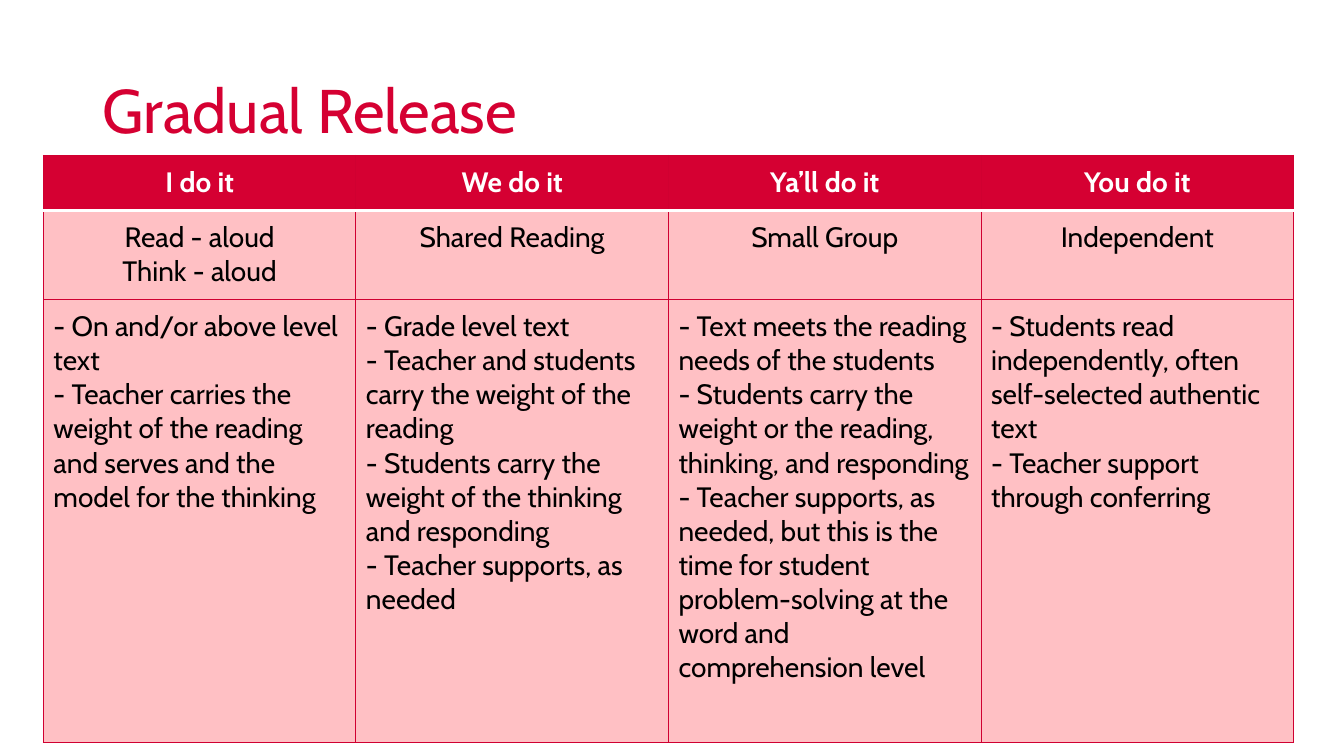
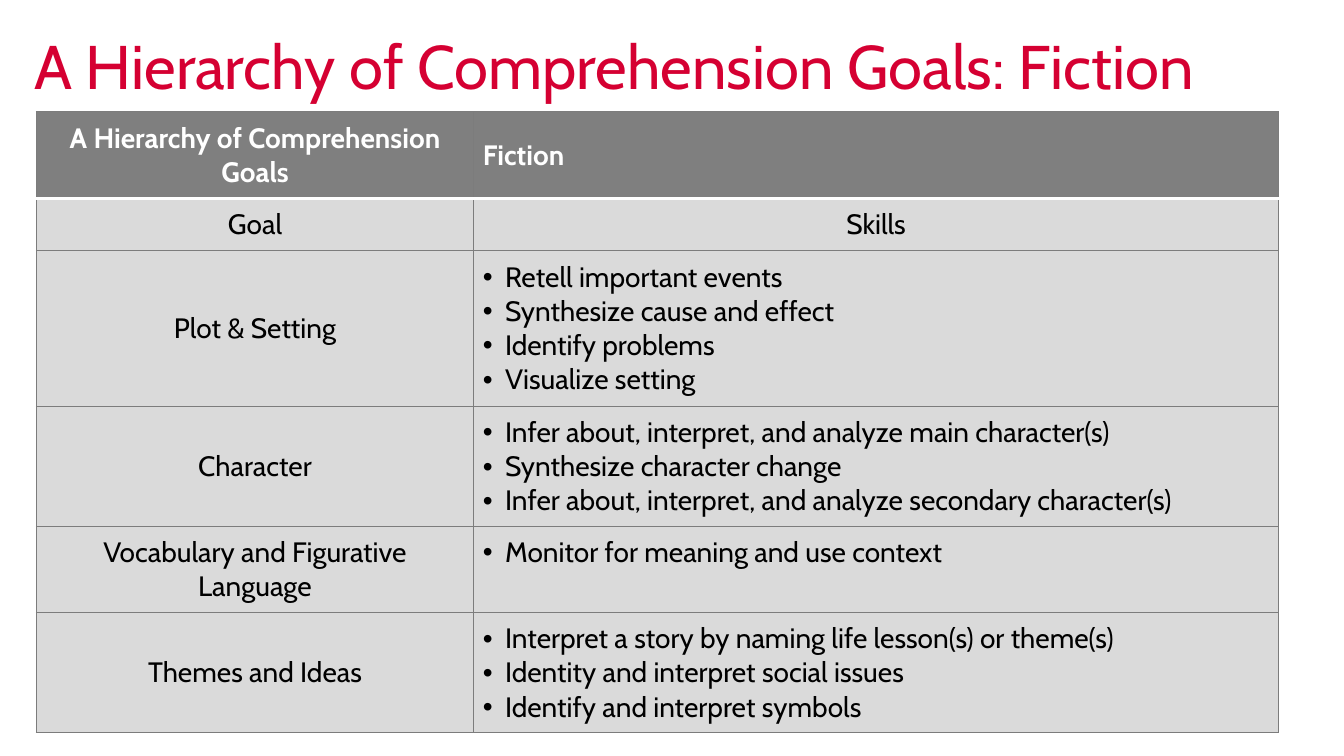
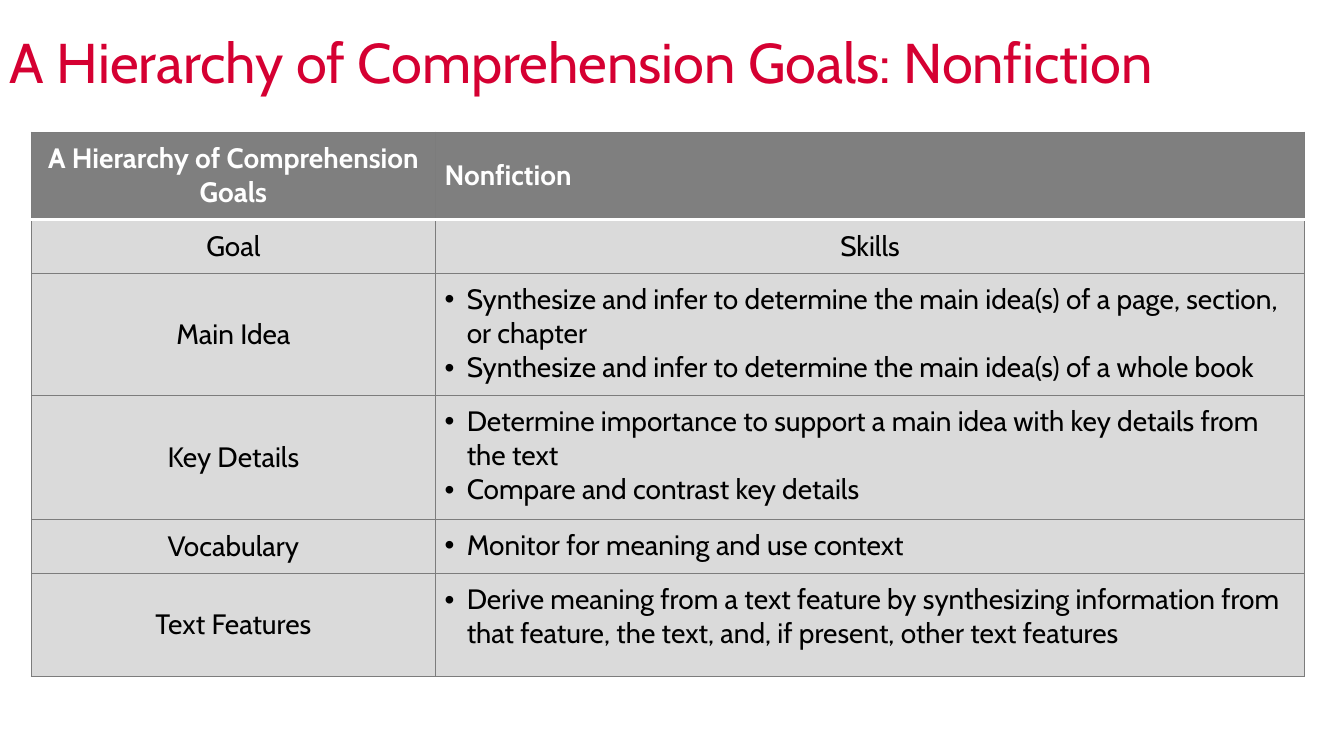
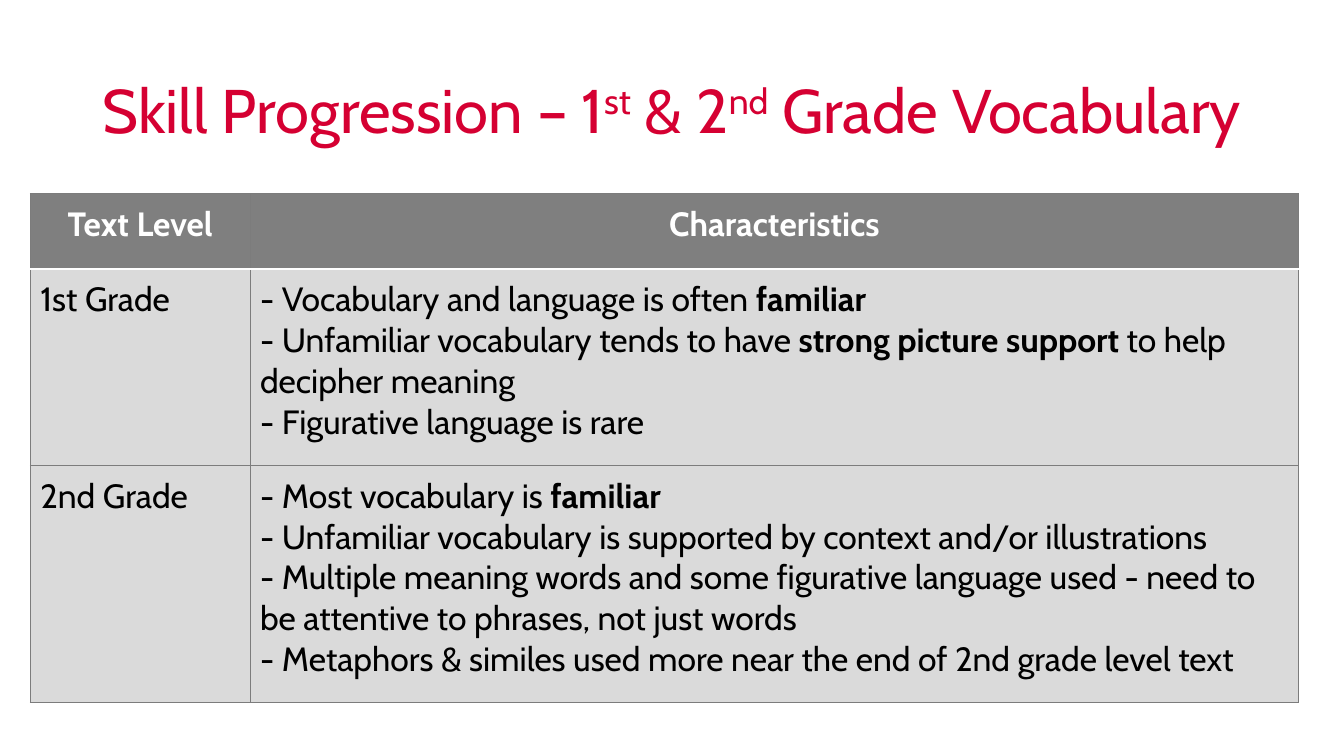
from dataclasses import dataclass
from functools import partial

from lxml.etree import SubElement
from pptx import Presentation
from pptx.dml.color import RGBColor
from pptx.enum.text import MSO_ANCHOR, PP_ALIGN
from pptx.oxml import parse_xml
from pptx.oxml.ns import nsdecls, qn
from pptx.util import Inches, Pt


@dataclass(frozen=True)
class Palette:
    header: str
    body: str
    border: str


@dataclass(frozen=True)
class Theme:
    font: str = "Cabin"
    accent: str = "D50032"
    text: str = "000000"
    light: str = "FFFFFF"
    red: Palette = Palette("D50032", "FFC0C4", "D00031")
    gray: Palette = Palette("7F7F7F", "DADADA", "7C7C7C")
    border_width: float = 0.75
    header_rule_width: float = 2
    bullet_indent: float = 0.22
    title_height: float = 1.45


@dataclass(frozen=True)
class Cell:
    lines: tuple
    align: PP_ALIGN = PP_ALIGN.LEFT
    anchor: MSO_ANCHOR = MSO_ANCHOR.TOP
    bulleted: bool = False


THEME = Theme()
SLIDE_SIZE = (13.33, 7.5)


def cell(*lines, **layout):
    return Cell(lines, **layout)


centered = partial(cell, align=PP_ALIGN.CENTER)
middle = partial(cell, anchor=MSO_ANCHOR.MIDDLE)
centered_middle = partial(centered, anchor=MSO_ANCHOR.MIDDLE)
bullets = partial(cell, bulleted=True)


def goal_rows(genre, skills_by_goal):
    """Rows of a goals table: genre header, column names, one row per goal."""
    return [
        [centered_middle("A Hierarchy of Comprehension Goals"), middle(genre)],
        [centered_middle("Goal"), centered_middle("Skills")],
        *([centered_middle(goal), bullets(*skills)]
          for goal, skills in skills_by_goal.items()),
    ]


RELEASE_ROWS = [
    [centered("I do it"), centered("We do it"),
     centered("Ya’ll do it"), centered("You do it")],
    [centered("Read - aloud", "Think - aloud"), centered("Shared Reading"),
     centered("Small Group"), centered("Independent")],
    [
        cell("- On and/or above level text",
             "- Teacher carries the weight of the reading and serves and the "
             "model for the thinking"),
        cell("- Grade level text",
             "- Teacher and students carry the weight of the reading",
             "- Students carry the weight of the thinking and responding",
             "- Teacher supports, as needed"),
        cell("- Text meets the reading needs of the students",
             "- Students carry the weight or the reading, thinking, and responding",
             "- Teacher supports, as needed, but this is the time for student "
             "problem-solving at the word and comprehension level"),
        cell("- Students read independently, often self-selected authentic text",
             "- Teacher support through conferring"),
    ],
]

FICTION_SKILLS = {
    "Plot & Setting": (
        "Retell important events", "Synthesize cause and effect",
        "Identify problems", "Visualize setting"),
    "Character": (
        "Infer about, interpret, and analyze main character(s)",
        "Synthesize character change",
        "Infer about, interpret, and analyze secondary character(s)"),
    "Vocabulary and Figurative Language": (
        "Monitor for meaning and use context",),
    "Themes and Ideas": (
        "Interpret a story by naming life lesson(s) or theme(s)",
        "Identity and interpret social issues",
        "Identify and interpret symbols"),
}

NONFICTION_SKILLS = {
    "Main Idea": (
        "Synthesize and infer to determine the main idea(s) of a page, section, "
        "or chapter",
        "Synthesize and infer to determine the main idea(s) of a whole book"),
    "Key Details": (
        "Determine importance to support a main idea with key details from the text",
        "Compare and contrast key details"),
    "Vocabulary": ("Monitor for meaning and use context",),
    "Text Features": (
        "Derive meaning from a text feature by synthesizing information from "
        "that feature, the text, and, if present, other text features",),
}

# In lines of text, *stars* mark bold and ^carets^ mark superscript.
VOCABULARY_ROWS = [
    [centered("Text Level"), centered("Characteristics")],
    [cell("1st Grade"), cell(
        "- Vocabulary and language is often *familiar*",
        "- Unfamiliar vocabulary tends to have *strong picture support *to help "
        "decipher meaning",
        "- Figurative language is rare")],
    [cell("2nd Grade"), cell(
        "- Most vocabulary is *familiar*",
        "- Unfamiliar vocabulary is supported by context and/or illustrations",
        "- Multiple meaning words and some figurative language used - need to be "
        "attentive to phrases, not just words",
        "- Metaphors & similes used more near the end of 2nd grade level text")],
]

SLIDES = [
    dict(title="Gradual Release", title_at=(0.92, 0.4, 11.5), title_size=44,
         rows=RELEASE_ROWS, palette=THEME.red, table_at=(0.43, 1.54),
         widths=[3.1] * 4, heights=[0.55, 0.88, 4.4], text_size=20, inset=0.1),
    dict(title="A Hierarchy of Comprehension Goals: Fiction",
         title_at=(0.24, -0.04, 12.62), title_size=44,
         rows=goal_rows("Fiction", FICTION_SKILLS), palette=THEME.gray,
         table_at=(0.36, 1.11), widths=[4.34, 7.98],
         heights=[0.86, 0.52, 1.54, 1.19, 0.86, 1.19], text_size=20, inset=0.09),
    dict(title="A Hierarchy of Comprehension Goals: Nonfiction",
         title_at=(0, -0.08, 13.33), title_size=40,
         rows=goal_rows("Nonfiction", NONFICTION_SKILLS), palette=THEME.gray,
         table_at=(0.31, 1.31), widths=[4.01, 8.62],
         heights=[0.87, 0.53, 1.21, 1.23, 0.54, 1.02], text_size=20, inset=0.09),
    dict(title="Skill Progression – 1^st^ & 2^nd^ Grade Vocabulary",
         title_at=(0.92, 0.4, 11.5), title_size=44,
         rows=VOCABULARY_ROWS, palette=THEME.gray, table_at=(0.3, 1.92),
         widths=[2.18, 10.4], heights=[0.75, 1.95, 2.35], text_size=24, inset=0.1),
]


def style_font(font, size, color, bold=False):
    font.name = THEME.font
    font.size = Pt(size)
    font.bold = bold
    font.color.rgb = RGBColor.from_string(color)


def add_marked_runs(paragraph, line):
    """Split a line at its marks; every second piece is bold or superscript."""
    mark = "^" if "^" in line else "*"
    for index, piece in enumerate(line.split(mark)):
        if not piece:
            continue
        run = paragraph.add_run()
        run.text = piece
        if index % 2 and mark == "*":
            run.font.bold = True
        elif index % 2:
            run._r.get_or_add_rPr().set("baseline", "30000")


def add_bullet(paragraph):
    properties = paragraph._p.get_or_add_pPr()
    indent = Inches(THEME.bullet_indent)
    properties.set("marL", str(indent))
    properties.set("indent", str(-indent))
    SubElement(properties, qn("a:buFont"), typeface="Arial")
    SubElement(properties, qn("a:buChar"), char="•")


def add_title(slide, text, at, size):
    left, top, width = map(Inches, at)
    frame = slide.shapes.add_textbox(
        left, top, width, Inches(THEME.title_height)).text_frame
    frame.word_wrap = True
    frame.vertical_anchor = MSO_ANCHOR.MIDDLE
    paragraph = frame.paragraphs[0]
    paragraph.line_spacing = 0.9
    style_font(paragraph.font, size, THEME.accent)
    add_marked_runs(paragraph, text)


def set_borders(table_cell, palette, row):
    """Outline a cell, with a heavier light rule between header and body."""
    plain = (palette.border, THEME.border_width)
    rule = (THEME.light, THEME.header_rule_width)
    edges = {"L": plain, "R": plain,
             "T": rule if row == 1 else plain,
             "B": rule if row == 0 else plain}
    properties = table_cell._tc.get_or_add_tcPr()
    for position, (side, (color, width)) in enumerate(edges.items()):
        properties.insert(position, parse_xml(
            f'<a:ln{side} {nsdecls("a")} w="{Pt(width)}"><a:solidFill>'
            f'<a:srgbClr val="{color}"/></a:solidFill></a:ln{side}>'))


def fill_cell(table_cell, content, row, palette, text_size, inset):
    is_header = row == 0
    table_cell.fill.solid()
    table_cell.fill.fore_color.rgb = RGBColor.from_string(
        palette.header if is_header else palette.body)
    set_borders(table_cell, palette, row)
    table_cell.vertical_anchor = content.anchor
    table_cell.margin_left = table_cell.margin_right = Inches(inset)
    table_cell.margin_top = table_cell.margin_bottom = Inches(inset)
    frame = table_cell.text_frame
    for index, line in enumerate(content.lines):
        paragraph = frame.add_paragraph() if index else frame.paragraphs[0]
        paragraph.alignment = content.align
        if content.bulleted:
            add_bullet(paragraph)
        style_font(paragraph.font, text_size,
                   THEME.light if is_header else THEME.text, is_header)
        add_marked_runs(paragraph, line)


def add_grid(slide, rows, palette, at, widths, heights, text_size, inset):
    left, top = map(Inches, at)
    table = slide.shapes.add_table(
        len(rows), len(widths), left, top,
        Inches(sum(widths)), Inches(sum(heights))).table
    table.horz_banding = False
    for column, width in zip(table.columns, widths):
        column.width = Inches(width)
    for table_row, height in zip(table.rows, heights):
        table_row.height = Inches(height)
    for row, contents in enumerate(rows):
        for column, content in enumerate(contents):
            fill_cell(table.cell(row, column), content, row,
                      palette, text_size, inset)


def main():
    deck = Presentation()
    deck.slide_width, deck.slide_height = map(Inches, SLIDE_SIZE)
    blank = deck.slide_layouts[6]
    for page in SLIDES:
        slide = deck.slides.add_slide(blank)
        add_grid(slide, page["rows"], page["palette"], page["table_at"],
                 page["widths"], page["heights"], page["text_size"], page["inset"])
        add_title(slide, page["title"], page["title_at"], page["title_size"])
    deck.save("out.pptx")


if __name__ == "__main__":
    main()
